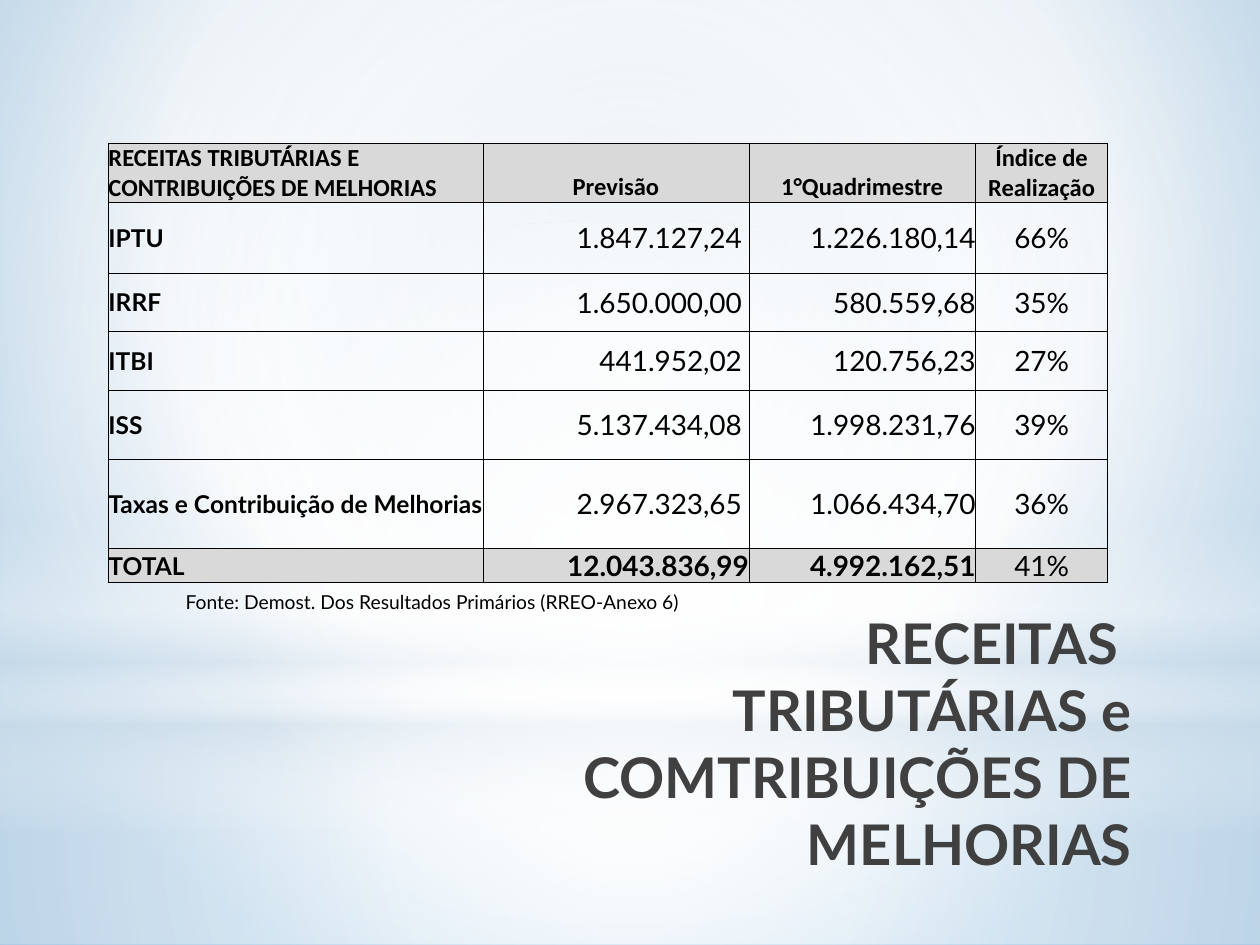
from lxml.etree import SubElement
from pptx import Presentation
from pptx.dml.color import RGBColor
from pptx.enum.shapes import MSO_SHAPE as SHAPE
from pptx.enum.text import MSO_ANCHOR as ANCHOR, PP_ALIGN as ALIGN
from pptx.oxml.ns import qn
from pptx.util import Pt

# Content
TITLE = "RECEITAS \vTRIBUTÁRIAS e COMTRIBUIÇÕES DE MELHORIAS"
SOURCE = "Fonte: Demost. Dos Resultados Primários (RREO-Anexo 6)"
ROWS = [
    ("RECEITAS TRIBUTÁRIAS E CONTRIBUIÇÕES DE MELHORIAS", "Previsão",
     "1°Quadrimestre", "Índice de Realização"),
    ("IPTU", "1.847.127,24", "1.226.180,14", "66%"),
    ("IRRF", "1.650.000,00", "580.559,68", "35%"),
    ("ITBI", "441.952,02", "120.756,23", "27%"),
    ("ISS", "5.137.434,08", "1.998.231,76", "39%"),
    ("Taxas e Contribuição de Melhorias", "2.967.323,65", "1.066.434,70", "36%"),
    ("TOTAL", "12.043.836,99", "4.992.162,51", "41%"),
]
COL_WIDTHS = [214, 152, 129.5, 75.5]
ROW_HEIGHTS = [33, 40.5, 33.5, 33.5, 39.5, 51, 19]
ALIGNS = [ALIGN.LEFT, ALIGN.RIGHT, ALIGN.RIGHT, ALIGN.CENTER]

COLORS = {"text": "000000", "title": "404040", "shade": "D9D9D9",
          "white": "FFFFFF", "mist": "CCDDEA", "sky": "BCD5E8", "blue": "82B6DE"}

# Gradient stops: position, colour, opacity (all in percent)
BACKGROUND = [(0, "sky", 100), (60, "white", 100), (100, "blue", 100)]
CENTER = (50, 50, 50, 50)
LAYERS = [
    (SHAPE.RECTANGLE, 402, 138, CENTER,
     [(0, "white", 91), (37, "white", 76), (100, "mist", 79)]),
    (SHAPE.RECTANGLE, 0, 402, CENTER,
     [(0, "white", 89), (48, "white", 62), (100, "mist", 79)]),
    (SHAPE.RECTANGLE, 297, 180, None,
     [(0, "white", 0), (29, "white", 30), (45, "mist", 40),
      (55, "white", 26), (65, "mist", 60), (100, "white", 0)]),
    (SHAPE.OVAL, 126, 402, CENTER, [(0, "white", 100), (56, "white", 0)]),
]


def rgb(name):
    return RGBColor.from_string(COLORS[name])


def put_text(tf, text, size=14, bold=False, color="text", font="Lato",
             align=ALIGN.LEFT):
    tf.word_wrap = True
    p = tf.paragraphs[0]
    p.text = text
    p.alignment = align
    for r in p.runs:
        r.font.name, r.font.size, r.font.bold = font, Pt(size), bold
        r.font.color.rgb = rgb(color)


def set_gradient(fill, owner, stops, focus=None):
    """Radial when a focus rectangle is given, otherwise top to bottom."""
    fill.gradient()
    grad = next(owner.iter(qn("a:gradFill")))
    for child in list(grad):
        grad.remove(child)
    gs_list = SubElement(grad, qn("a:gsLst"))
    for pos, color, opacity in stops:
        gs = SubElement(gs_list, qn("a:gs"), pos=str(pos * 1000))
        clr = SubElement(gs, qn("a:srgbClr"), val=COLORS[color])
        if opacity < 100:
            SubElement(clr, qn("a:alpha"), val=str(opacity * 1000))
    if focus:
        radial = SubElement(grad, qn("a:path"), path="circle")
        SubElement(radial, qn("a:fillToRect"),
                   {side: str(v * 1000) for side, v in zip("ltrb", focus)})
    else:
        SubElement(grad, qn("a:lin"), ang="5400000", scaled="0")


def set_borders(cell, widths):
    tc_pr = cell._tc.get_or_add_tcPr()
    for i, (side, width) in enumerate(zip("LRTB", widths)):
        ln = SubElement(tc_pr, qn(f"a:ln{side}"), w=str(Pt(width)))
        solid = SubElement(ln, qn("a:solidFill"))
        SubElement(solid, qn("a:srgbClr"), val=COLORS["text"])
        tc_pr.insert(i, ln)  # borders come before the fill


prs = Presentation()
prs.slide_width, prs.slide_height = Pt(720), Pt(540)
slide = prs.slides.add_slide(prs.slide_layouts[6])

# Background and its soft light layers
set_gradient(slide.background.fill, slide.element, BACKGROUND, (20, 10, 20, 60))
for kind, top, height, focus, stops in LAYERS:
    s = slide.shapes.add_shape(kind, 0, Pt(top), prs.slide_width, Pt(height))
    s.shadow.inherit = False
    s.line.fill.background()
    set_gradient(s.fill, s.element, stops, focus)

# Title and source note
title = slide.shapes.add_textbox(Pt(141), Pt(344), Pt(513), Pt(90))
put_text(title.text_frame, TITLE, size=32, bold=True, color="title",
         align=ALIGN.RIGHT)
note = slide.shapes.add_textbox(Pt(99), Pt(333.5), Pt(493), Pt(21))
put_text(note.text_frame, SOURCE, size=11)

# Table
table = slide.shapes.add_table(
    len(ROWS), len(COL_WIDTHS), Pt(62), Pt(82),
    Pt(sum(COL_WIDTHS)), Pt(sum(ROW_HEIGHTS))).table
table.first_row = table.horz_banding = False
for col, width in zip(table.columns, COL_WIDTHS):
    col.width = Pt(width)
for row, height in zip(table.rows, ROW_HEIGHTS):
    row.height = Pt(height)

last_row, last_col = len(ROWS) - 1, len(COL_WIDTHS) - 1
for r, row in enumerate(ROWS):
    header, total = r == 0, r == last_row
    for c, text in enumerate(row):
        cell = table.cell(r, c)
        cell.margin_left = cell.margin_top = cell.margin_bottom = 0
        # Forecast values stand slightly off the border
        cell.margin_right = Pt(4 if c == 1 and not (header or total) else 0)
        cell.vertical_anchor = ANCHOR.BOTTOM if header else ANCHOR.MIDDLE
        put_text(cell.text_frame, text,
                 size=14 if header or c == 0 else 16,
                 bold=header or c == 0 or (total and c < last_col),
                 font="Calibri" if header else "Lato",
                 align=ALIGN.CENTER if header and c else ALIGNS[c])
        if header or total:
            cell.fill.solid()
            cell.fill.fore_color.rgb = rgb("shade")
        else:
            cell.fill.background()
        # Heavy lines: left edge, shaded rows' outline, under the header
        heavy = (c == 0 or (total and c == last_col),
                 (header and c == last_col) or (total and c >= last_col - 1),
                 header or total or (r == 1 and c < last_col),
                 total or r == last_row - 1 or (header and c < last_col))
        set_borders(cell, [1 if h else 0.5 for h in heavy])

prs.save("out.pptx")
